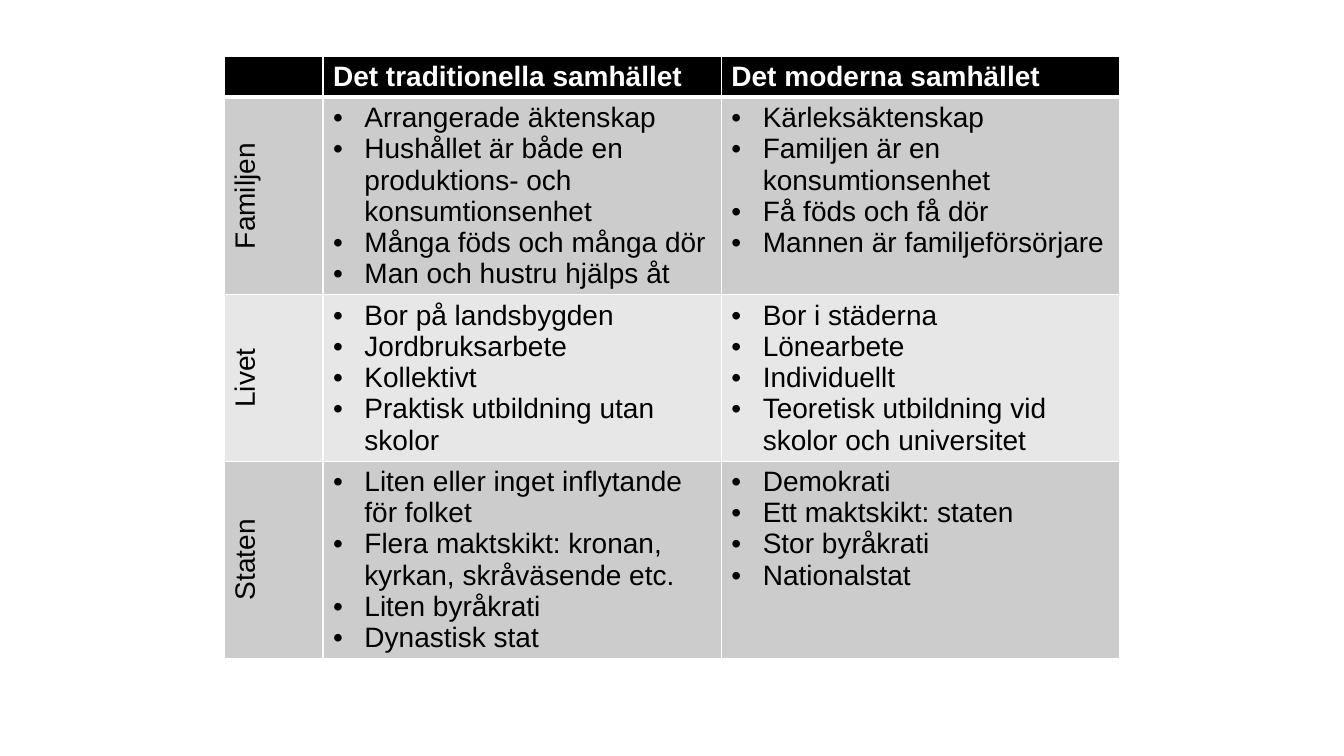
from lxml import etree
from pptx import Presentation
from pptx import util as u
from pptx.dml.color import RGBColor
from pptx.enum import text
from pptx.oxml.ns import qn

COLORS = {
    "header": "000000",
    "dark_band": "CCCCCC",
    "light_band": "E7E7E7",
    "border": "FFFFFF",
    "header_text": "FFFFFF",
    "body_text": "000000",
}
HEADINGS = ["", "Det traditionella samhället", "Det moderna samhället"]
TOPICS = [
    ("Familjen",
     ["Arrangerade äktenskap",
      "Hushållet är både en produktions- och konsumtionsenhet",
      "Många föds och många dör",
      "Man och hustru hjälps åt"],
     ["Kärleksäktenskap",
      "Familjen är en konsumtionsenhet",
      "Få föds och få dör",
      "Mannen är familjeförsörjare"]),
    ("Livet",
     ["Bor på landsbygden",
      "Jordbruksarbete",
      "Kollektivt",
      "Praktisk utbildning utan skolor"],
     ["Bor i städerna",
      "Lönearbete",
      "Individuellt",
      "Teoretisk utbildning vid skolor och universitet"]),
    ("Staten",
     ["Liten eller inget inflytande för folket",
      "Flera maktskikt: kronan, kyrkan, skråväsende etc.",
      "Liten byråkrati",
      "Dynastisk stat"],
     ["Demokrati",
      "Ett maktskikt: staten",
      "Stor byråkrati",
      "Nationalstat"]),
]
COL_WIDTHS = [2.48, 10.04, 10.04]
ROW_HEIGHTS = [1.04, 4.97, 4.18, 4.97]


def rgb(name):
    return RGBColor.from_string(COLORS[name])


def add_bullet(p, indent=u.Cm(0.79)):
    pPr = p._p.get_or_add_pPr()
    pPr.set("marL", str(indent))
    pPr.set("indent", str(-indent))
    etree.SubElement(pPr, qn("a:buFont")).set("typeface", "Arial")
    etree.SubElement(pPr, qn("a:buChar")).set("char", "•")


def set_borders(cell, top=1, bottom=1):
    tcPr = cell._tc.get_or_add_tcPr()
    for side, width in (("L", 1), ("R", 1), ("T", top), ("B", bottom)):
        ln = etree.SubElement(tcPr, qn(f"a:ln{side}"), w=str(u.Pt(width)))
        fill = etree.SubElement(ln, qn("a:solidFill"))
        etree.SubElement(fill, qn("a:srgbClr")).set("val", COLORS["border"])


def set_fill(cell, color):
    cell.fill.solid()
    cell.fill.fore_color.rgb = rgb(color)


def write(cell, lines, color="body_text", bold=False, bullets=False, align=None):
    tf = cell.text_frame
    for i, line in enumerate(lines):
        p = tf.paragraphs[0] if i == 0 else tf.add_paragraph()
        p.alignment = align
        if bullets:
            add_bullet(p)
        r = p.add_run()
        r.text = line
        r.font.name = "Arial"
        r.font.size = u.Pt(20)
        r.font.bold = bold
        r.font.color.rgb = rgb(color)


def add_grid(s):
    frame = s.shapes.add_table(
        len(ROW_HEIGHTS), len(COL_WIDTHS), u.Cm(5.66), u.Cm(1.41),
        u.Cm(sum(COL_WIDTHS)), u.Cm(sum(ROW_HEIGHTS)))
    table = frame.table
    for col, width in zip(table.columns, COL_WIDTHS):
        col.width = u.Cm(width)
    for row, height in zip(table.rows, ROW_HEIGHTS):
        row.height = u.Cm(height)
    return table


def fill_header(table):
    for col, heading in enumerate(HEADINGS):
        cell = table.cell(0, col)
        set_borders(cell, bottom=3)
        set_fill(cell, "header")
        if heading:
            write(cell, [heading], color="header_text", bold=True)


def fill_topic(table, row, label, *columns):
    band = "dark_band" if row % 2 else "light_band"
    for col in range(len(COL_WIDTHS)):
        cell = table.cell(row, col)
        set_borders(cell, top=3 if row == 1 else 1)
        set_fill(cell, band)
    label_cell = table.cell(row, 0)
    label_cell._tc.get_or_add_tcPr().set("vert", "vert270")
    write(label_cell, [label], align=text.PP_ALIGN.CENTER)
    for col, lines in enumerate(columns, 1):
        write(table.cell(row, col), lines, bullets=True)


def main():
    prs = Presentation()
    prs.slide_width, prs.slide_height = u.Cm(33.87), u.Cm(19.05)
    s = prs.slides.add_slide(prs.slide_layouts[6])
    table = add_grid(s)
    fill_header(table)
    for row, topic in enumerate(TOPICS, 1):
        fill_topic(table, row, *topic)
    prs.save("out.pptx")


main()
